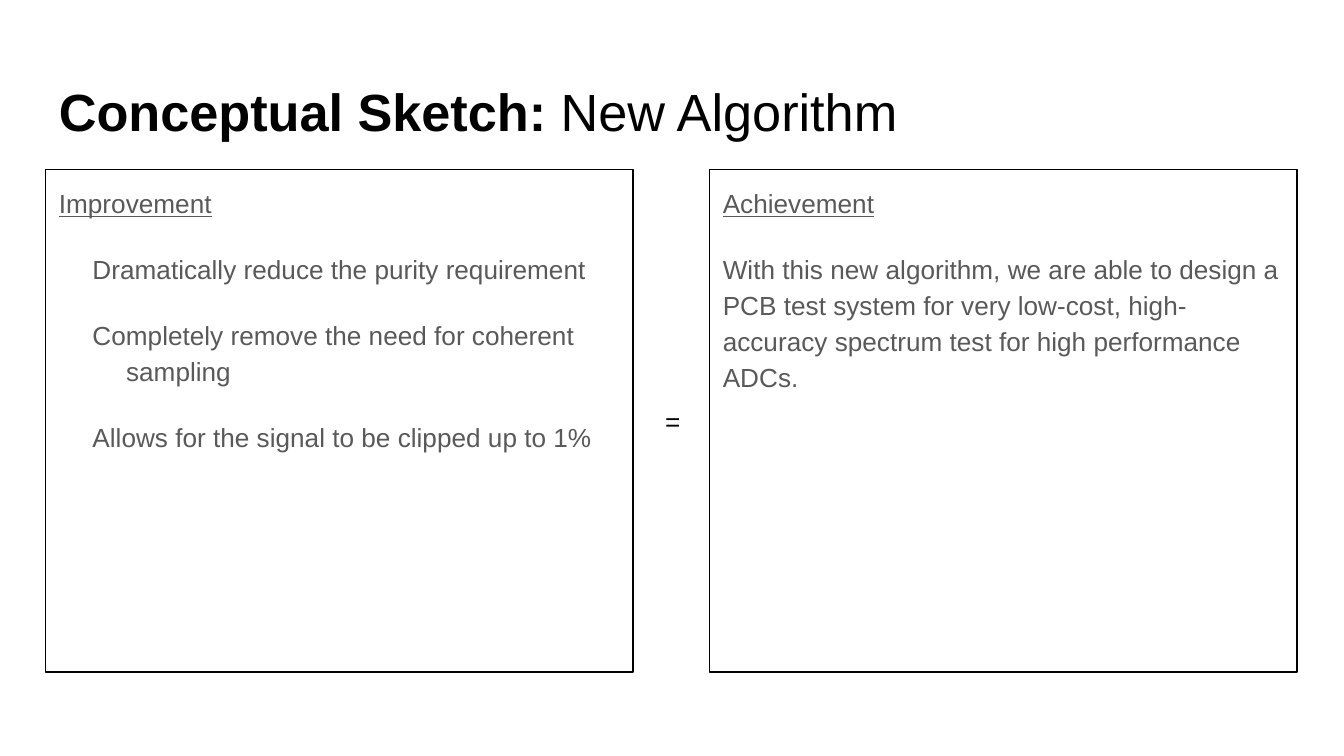
from pptx import Presentation
from pptx.dml.color import RGBColor
from pptx.enum.shapes import MSO_SHAPE
from pptx.enum.text import MSO_ANCHOR, PP_ALIGN
from pptx.util import Inches, Pt

BLACK = "000000"
GREY = "595959"


def rgb(value):
    return RGBColor.from_string(value)


class SlideBuilder:
    font = "Arial"
    body_size = 14

    def __init__(self, slide):
        self.slide = slide

    def frame(self, shape, inset_y=0.1):
        tf = shape.text_frame
        tf.word_wrap = True
        tf.vertical_anchor = MSO_ANCHOR.TOP
        tf.margin_left = tf.margin_right = Inches(0.1)
        tf.margin_top = tf.margin_bottom = Inches(inset_y)
        return tf

    def style(self, p, size, color, align=PP_ALIGN.LEFT):
        p.alignment = align
        p.font.name = self.font
        p.font.size = Pt(size)
        p.font.color.rgb = rgb(color)

    def textbox(self, box, runs, size, align=PP_ALIGN.LEFT, inset_y=0.1):
        s = self.slide.shapes.add_textbox(*map(Inches, box))
        p = self.frame(s, inset_y).paragraphs[0]
        self.style(p, size, BLACK, align)
        for text, bold in runs:
            r = p.add_run()
            r.text = text
            r.font.bold = bold

    def panel(self, box, heading, lines, hanging=False):
        s = self.slide.shapes.add_shape(MSO_SHAPE.RECTANGLE, *map(Inches, box))
        s.shadow.inherit = False
        s.fill.background()
        s.line.color.rgb = rgb(BLACK)
        s.line.width = Pt(0.75)
        tf = self.frame(s)
        for i, text in enumerate([heading, *lines]):
            p = tf.paragraphs[0] if i == 0 else tf.add_paragraph()
            p.text = text
            self.style(p, self.body_size, GREY)
            p.font.underline = i == 0
            p.line_spacing = 1.15
            p.space_after = Pt(16)
            if hanging and i > 0:
                pPr = p._p.get_or_add_pPr()
                pPr.set("marL", str(Inches(0.5)))
                pPr.set("indent", str(Inches(-0.25)))


def main():
    prs = Presentation()
    prs.slide_width = Inches(10)
    prs.slide_height = prs.slide_width * 9 // 16
    builder = SlideBuilder(prs.slides.add_slide(prs.slide_layouts[6]))

    builder.textbox(
        (0.34, 0.49, 9.32, 0.63),
        [("Conceptual Sketch:", True), (" New Algorithm", False)],
        28,
    )
    builder.panel(
        (0.34, 1.26, 4.37, 3.74),
        "Improvement",
        [
            "Dramatically reduce the purity requirement",
            "Completely remove the need for coherent sampling",
            "Allows for the signal to be clipped up to 1%",
        ],
        hanging=True,
    )
    builder.panel(
        (5.28, 1.26, 4.37, 3.74),
        "Achievement",
        [
            "With this new algorithm, we are able to design a PCB test system "
            "for very low-cost, high-accuracy spectrum test for high "
            "performance ADCs."
        ],
    )
    builder.textbox(
        (4.8, 2.97, 0.41, 0.31), [("=", False)], 14, PP_ALIGN.CENTER, 0.05
    )
    prs.save("out.pptx")


if __name__ == "__main__":
    main()
